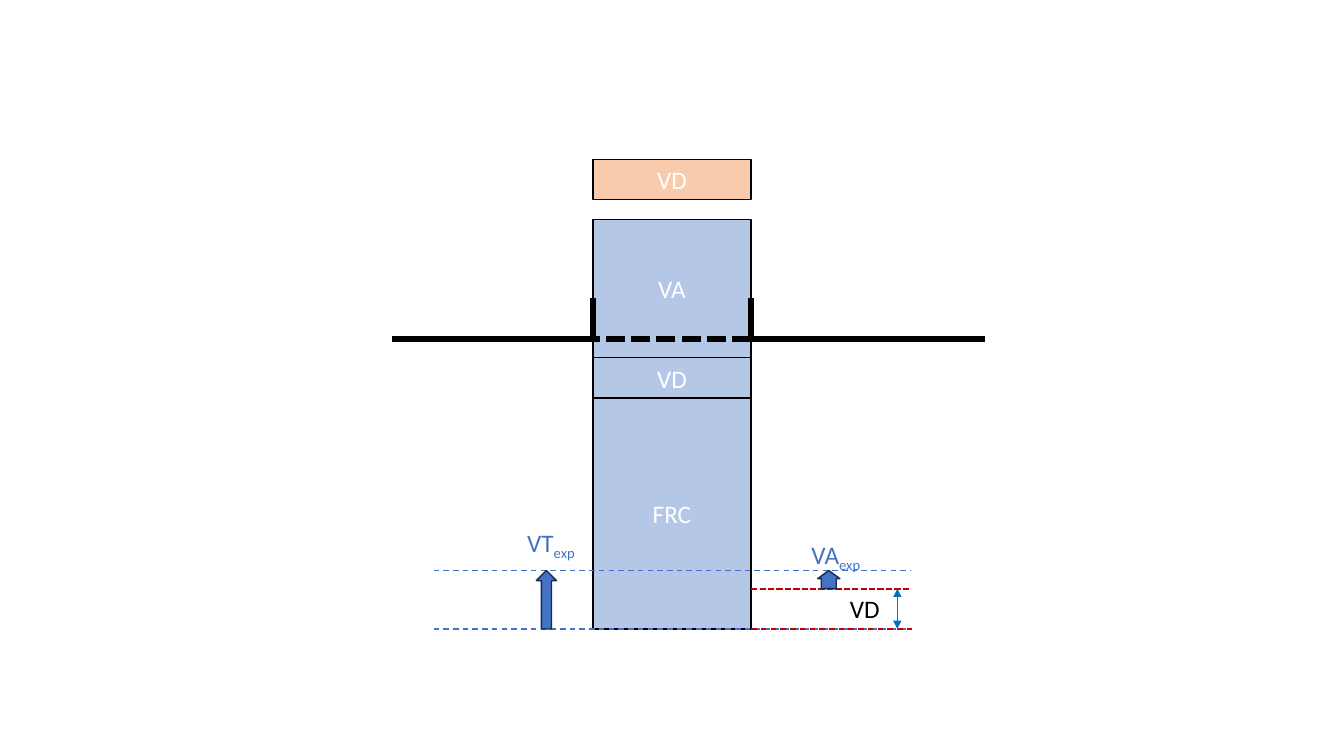
from collections import namedtuple

from pptx import Presentation
from pptx.dml.color import RGBColor
from pptx.enum.dml import MSO_LINE as Dash
from pptx.enum.shapes import MSO_CONNECTOR as Connector, MSO_SHAPE as Shape
from pptx.enum.text import MSO_ANCHOR as Anchor, PP_ALIGN as Align
from pptx.oxml.ns import qn
from pptx.util import Inches, Pt
from lxml.etree import SubElement

BLACK = RGBColor(0x00, 0x00, 0x00)
WHITE = RGBColor(0xFF, 0xFF, 0xFF)
LUNG = RGBColor(0xB4, 0xC7, 0xE7)
DEAD_SPACE = RGBColor(0xF8, 0xCB, 0xAD)
BLUE = RGBColor(0x44, 0x72, 0xC4)
NAVY = RGBColor(0x17, 0x2C, 0x51)
RED = RGBColor(0xC0, 0x00, 0x00)
BRIGHT_BLUE = RGBColor(0x00, 0x70, 0xC0)

Box = namedtuple("Box", "left top width height")
COLUMN = Box(5.88, 1.58, 1.57, 4.66)
DEAD_HEIGHT = 0.4
TIDAL_HEIGHT = 0.58


def add_line(slide, start, end, color, width=1, dash=None, heads=False):
    """Draw a straight line, dashed or with triangles at both ends on request."""
    line = slide.shapes.add_connector(Connector.STRAIGHT, *map(Inches, start + end))
    line.line.color.rgb = color
    line.line.width = Pt(width)
    if dash:
        line.line.dash_style = dash
    properties = line._element.spPr
    if heads:
        for end_tag in ("a:headEnd", "a:tailEnd"):
            SubElement(properties.find(qn("a:ln")), qn(end_tag), type="triangle")
    SubElement(properties, qn("a:effectLst"))


def add_solid(slide, kind, box, fill, outline):
    """Add a filled preset shape with a thin outline."""
    solid = slide.shapes.add_shape(kind, *map(Inches, box))
    solid.shadow.inherit = False
    solid.fill.solid()
    solid.fill.fore_color.rgb = fill
    solid.line.color.rgb = outline
    solid.line.width = Pt(1)
    return solid


def write(frame, text, color, subscript=""):
    """Write one line of text with an optional subscript."""
    paragraph = frame.paragraphs[0]
    paragraph.font.name = "Calibri"
    paragraph.font.size = Pt(18)
    paragraph.font.color.rgb = color
    paragraph.add_run().text = text
    if subscript:
        lowered = paragraph.add_run()
        lowered.text = subscript
        lowered._r.get_or_add_rPr().set("baseline", "-25000")
    return paragraph


def add_label(slide, box, text, color, subscript=""):
    """Add a free-standing label."""
    label = slide.shapes.add_textbox(*map(Inches, box))
    label.text_frame.word_wrap = False
    write(label.text_frame, text, color, subscript)


def add_up_arrow(slide, box, shaft, head):
    """Add a block arrow with its shaft and head given as shares."""
    arrow = add_solid(slide, Shape.UP_ARROW, box, BLUE, NAVY)
    arrow.adjustments[0] = shaft
    arrow.adjustments[1] = head


def draw_lung_column(slide, box):
    """Stack the lung volumes downwards from the top of the box."""
    gap = 0.2
    alveolar = 1.37
    residual = box.height - 2 * DEAD_HEIGHT - gap - alveolar
    top = box.top
    for text, height, fill, space in (
        ("VD", DEAD_HEIGHT, DEAD_SPACE, gap),
        ("VA", alveolar, LUNG, 0),
        ("VD", DEAD_HEIGHT, LUNG, 0),
        ("FRC", residual, LUNG, 0),
    ):
        volume = add_solid(slide, Shape.RECTANGLE, Box(box.left, top, box.width, height), fill, BLACK)
        volume.text_frame.vertical_anchor = Anchor.MIDDLE
        write(volume.text_frame, text, WHITE).alignment = Align.CENTER
        top += height + space


def draw_airway_opening(slide, box):
    """Draw the wall with its raised lips and dotted opening across the box."""
    right = box.left + box.width
    level = box.top + 1.78
    for side, outer in ((box.left, box.left - 1.99), (right, right + 2.32)):
        add_line(slide, (side, level - 0.4), (side, level), BLACK, 4.5)
        add_line(slide, (outer, level), (side, level), BLACK, 4.5)
    add_line(slide, (right, level), (box.left, level), BLACK, 4.5, Dash.SQUARE_DOT)


def draw_expired_volumes(slide, box):
    """Mark tidal, alveolar and dead space volumes at the foot of the box."""
    right = box.left + box.width
    floor = box.top + box.height
    tidal = floor - TIDAL_HEIGHT
    dead = floor - DEAD_HEIGHT
    for level in (tidal, floor):
        add_line(slide, (box.left - 1.58, level), (right + 1.58, level), BLUE, 1, Dash.DASH)
    add_line(slide, (right, floor), (right + 1.6, floor), RED, 1, Dash.DASH)
    add_line(slide, (right, dead), (right + 1.58, dead), RED, 1.5, Dash.SQUARE_DOT)

    add_up_arrow(slide, Box(box.left - 0.56, tidal, 0.2, floor - tidal), 0.5, 0.5)
    add_up_arrow(slide, Box(right + 0.66, tidal, 0.22, dead - tidal), 0.68, 0.45)
    add_line(slide, (right + 1.45, dead), (right + 1.45, floor), BRIGHT_BLUE, 1, heads=True)

    add_label(slide, Box(box.left - 0.75, tidal - 0.48, 0.69, 0.4), "VT", BLUE, "exp")
    add_label(slide, Box(right + 0.5, tidal - 0.36, 0.72, 0.4), "VA", BLUE, "exp")
    add_label(slide, Box(right + 0.88, dead, 0.5, 0.4), "VD", BLACK)


def main():
    """Build and save the slide."""
    deck = Presentation()
    deck.slide_width = Inches(13.33)
    deck.slide_height = Inches(7.5)
    slide = deck.slides.add_slide(deck.slide_layouts[6])
    draw_lung_column(slide, COLUMN)
    draw_airway_opening(slide, COLUMN)
    draw_expired_volumes(slide, COLUMN)
    deck.save("out.pptx")


if __name__ == "__main__":
    main()
